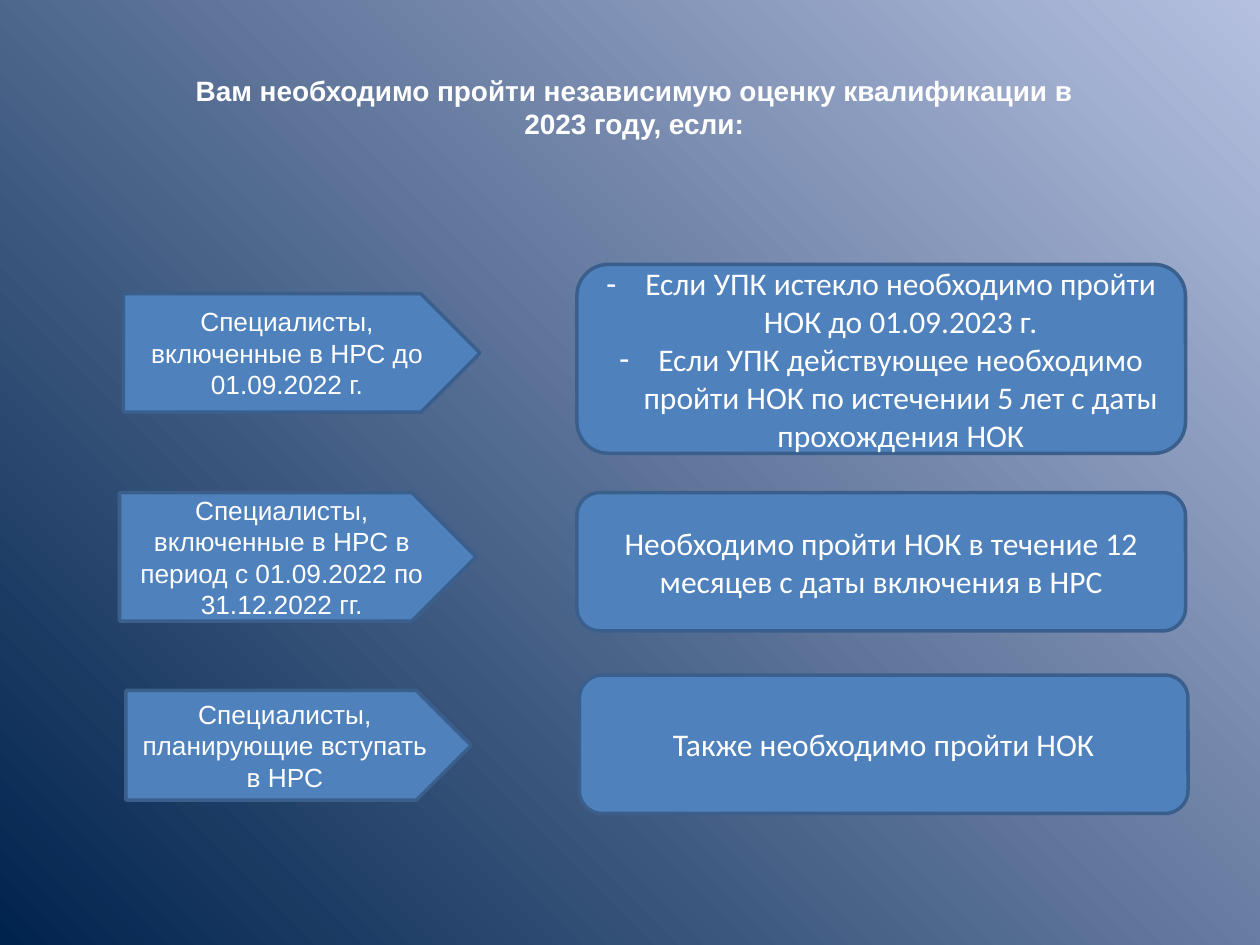
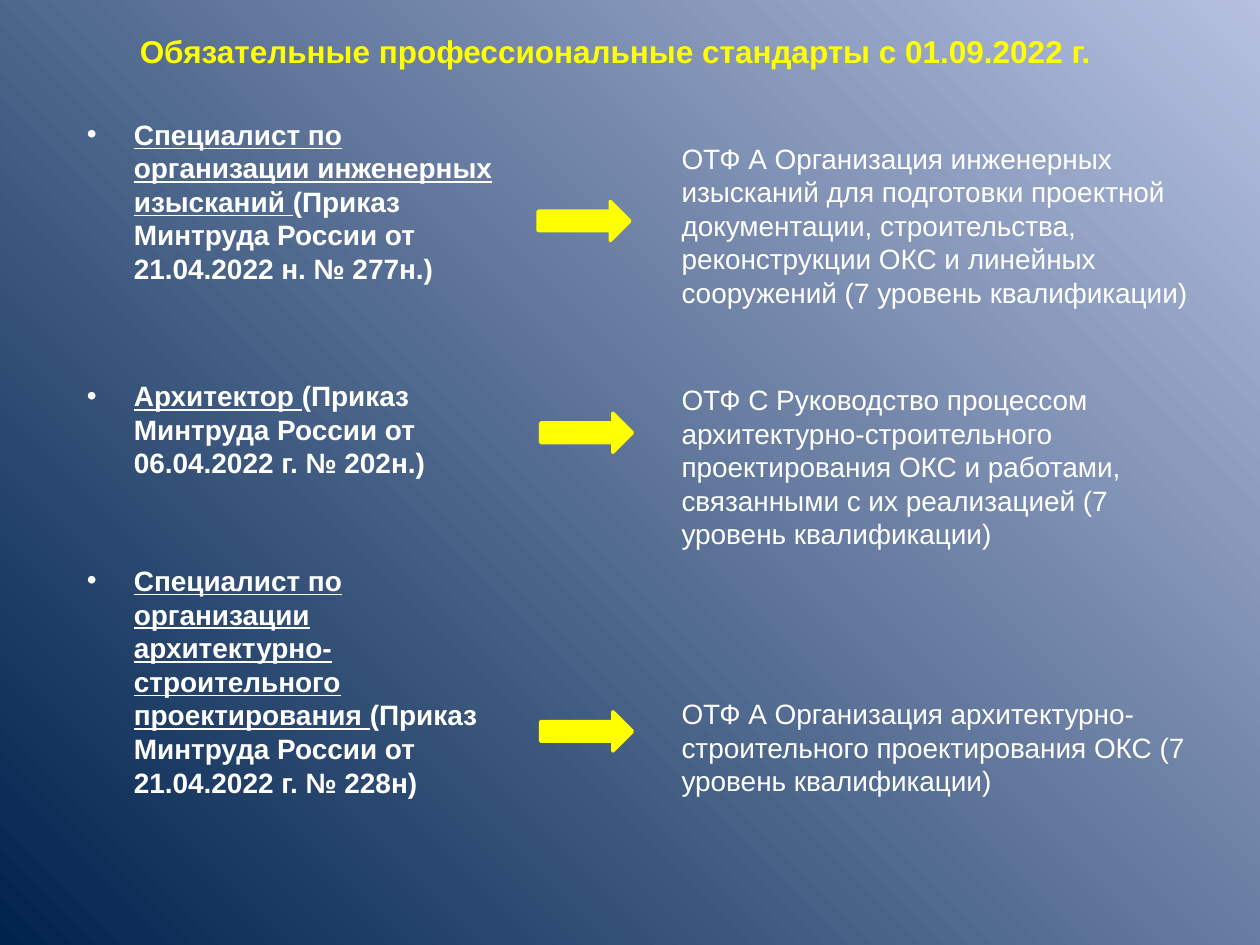
from pptx import Presentation
from pptx.dml.color import RGBColor
from pptx.enum.shapes import MSO_SHAPE
from pptx.enum.text import MSO_ANCHOR, PP_ALIGN
from pptx.oxml import parse_xml
from pptx.oxml.ns import nsdecls, qn
from pptx.util import Cm, Pt

PENTAGON = MSO_SHAPE.PENTAGON
ROUNDED = MSO_SHAPE.ROUNDED_RECTANGLE
RIGHT_ARROW = MSO_SHAPE.RIGHT_ARROW
MIDDLE = MSO_ANCHOR.MIDDLE
CENTER = PP_ALIGN.CENTER
LEFT = PP_ALIGN.LEFT

WHITE = RGBColor(0xFF, 0xFF, 0xFF)
YELLOW = RGBColor(0xFF, 0xFF, 0x00)
BLUE = RGBColor(0x4F, 0x81, 0xBD)
DARK_BLUE = RGBColor(0x3A, 0x5F, 0x8C)
GRADIENT = ((0, RGBColor(0xBF, 0xC9, 0xE5)), (0, RGBColor(0xB5, 0xC0, 0xE0)),
            (100000, RGBColor(0x00, 0x23, 0x4D)))

CASES = (
    ((2.49, 5.92, 7.19, 2.39), "Специалисты, включенные в НРС до 01.09.2022 г.",
     (11.63, 5.33, 12.27, 3.81),
     ("Если УПК истекло необходимо пройти НОК до 01.09.2023 г.",
      "Если УПК действующее необходимо пройти НОК по истечении 5 лет с даты прохождения НОК")),
    ((2.41, 9.93, 7.19, 2.59),
     "Специалисты, включенные в НРС в период с 01.09.2022 по 31.12.2022 гг.",
     (11.63, 9.93, 12.27, 2.79),
     ("Необходимо пройти НОК в течение 12 месяцев с даты включения в НРС",)),
    ((2.54, 13.92, 6.96, 2.21), "Специалисты, планирующие вступать в НРС",
     (11.68, 13.61, 12.27, 2.79), ("Также необходимо пройти НОК",)),
)

STANDARDS = (
    (0, "Специалист по организации инженерных изысканий ",
     "(Приказ Минтруда России от 21.04.2022 н. № 277н.)"),
    (53.5, "Архитектор ", "(Приказ Минтруда России от 06.04.2022 г. № 202н.)"),
    (48, "Специалист по организации архитектурно-строительного проектирования ",
     "(Приказ Минтруда России от 21.04.2022 г. № 228н)"),
)

FUNCTIONS = (
    (10.85, 4.06, 2.72,
     "ОТФ А Организация инженерных изысканий для подготовки проектной документации, "
     "строительства, реконструкции ОКС и линейных сооружений (7 уровень квалификации)"),
    (10.9, 8.33, 7.59,
     "ОТФ С Руководство процессом архитектурно-строительного проектирования ОКС "
     "и работами, связанными с их реализацией (7 уровень квалификации)"),
    (10.9, 14.35, 13.92,
     "ОТФ А Организация архитектурно-строительного проектирования ОКС "
     "(7 уровень квалификации)"),
)


def set_background(master):
    """Give every slide a gradient that spreads from the top right corner."""
    stops = "".join(f'<a:gs pos="{pos}"><a:srgbClr val="{color}"/></a:gs>'
                    for pos, color in GRADIENT)
    background = parse_xml(
        f'<p:bg {nsdecls("p", "a")}><p:bgPr><a:gradFill rotWithShape="1">'
        f'<a:gsLst>{stops}</a:gsLst><a:path path="circle">'
        '<a:fillToRect l="100000" b="100000"/></a:path></a:gradFill>'
        '<a:effectLst/></p:bgPr></p:bg>')
    common = master.element.cSld
    for old in common.findall(qn("p:bg")):
        common.remove(old)
    common.insert(0, background)


def style(paragraph, size, color=WHITE, font="Arial", bold=False, align=LEFT):
    """Set the alignment and the font of a paragraph."""
    paragraph.alignment = align
    paragraph.font.size = Pt(size)
    paragraph.font.name = font
    paragraph.font.bold = bold
    paragraph.font.color.rgb = color


def add_bullet(paragraph, char, indent):
    """Hang a paragraph behind a bullet character."""
    properties = paragraph._p.get_or_add_pPr()
    properties.set("marL", str(Cm(indent)))
    properties.set("indent", str(-Cm(indent)))
    properties.append(parse_xml(f'<a:buFont {nsdecls("a")} typeface="Arial"/>'))
    properties.append(parse_xml(f'<a:buChar {nsdecls("a")} char="{char}"/>'))


def add_text_frame(slide, box):
    """Add a wrapping text box and return its frame."""
    frame = slide.shapes.add_textbox(*map(Cm, box)).text_frame
    frame.word_wrap = True
    return frame


def add_text(slide, box, text, size, **look):
    """Add a text box with one paragraph."""
    paragraph = add_text_frame(slide, box).paragraphs[0]
    paragraph.text = text
    style(paragraph, size, **look)


def add_title(slide, box, text, size, color):
    """Add a bold centred slide title."""
    add_text(slide, box, text, size, color=color, bold=True, align=CENTER)


def add_figure(slide, kind, box, fill, outline):
    """Add a filled and outlined preset shape."""
    figure = slide.shapes.add_shape(kind, *map(Cm, box))
    figure.shadow.inherit = False
    figure.fill.solid()
    figure.fill.fore_color.rgb = fill
    figure.line.color.rgb = outline
    figure.line.width = Pt(2)
    return figure


def add_panel(slide, kind, box, lines, size, font):
    """Add a blue panel with centred text, dashed when it has several lines."""
    frame = add_figure(slide, kind, box, BLUE, DARK_BLUE).text_frame
    frame.word_wrap = True
    frame.vertical_anchor = MIDDLE
    for index, line in enumerate(lines):
        paragraph = frame.add_paragraph() if index else frame.paragraphs[0]
        paragraph.text = line
        if len(lines) > 1:
            add_bullet(paragraph, "-", 0.79)
        style(paragraph, size, font=font, align=CENTER)


def add_standards(slide, box):
    """Add the bulleted list of standards with underlined names."""
    frame = add_text_frame(slide, box)
    for index, (gap, name, order) in enumerate(STANDARDS):
        paragraph = frame.add_paragraph() if index else frame.paragraphs[0]
        add_bullet(paragraph, "•", 0.95)
        paragraph.space_before = Pt(gap)
        style(paragraph, 16, bold=True)
        name_run = paragraph.add_run()
        name_run.text = name
        name_run.font.underline = True
        paragraph.add_run().text = order


def build_assessment(slide):
    """Show who has to pass the assessment and when."""
    add_title(slide, (3.68, 1.35, 18.21, 1.19),
              "Вам необходимо пройти независимую оценку квалификации в 2023 году, если:",
              16, WHITE)
    for group_box, group, rule_box, rules in CASES:
        add_panel(slide, PENTAGON, group_box, (group,), 15, "Arial")
        add_panel(slide, ROUNDED, rule_box, rules, 18, "Calibri")


def build_standards(slide):
    """Match each mandatory standard with its labour function."""
    add_title(slide, (0.3, 0.53, 24.21, 2.39),
              "Обязательные профессиональные стандарты с 01.09.2022 г.", 18, YELLOW)
    add_standards(slide, (1.5, 2.24, 8.89, 16.1))
    for arrow_left, arrow_top, text_top, function in FUNCTIONS:
        add_figure(slide, RIGHT_ARROW, (arrow_left, arrow_top, 1.85, 0.79), YELLOW, YELLOW)
        add_text(slide, (13.49, text_top, 11, 4.29), function, 16)


def main():
    """Build and save the presentation."""
    deck = Presentation()
    deck.slide_width = Cm(25.4)
    deck.slide_height = Cm(19.05)
    set_background(deck.slide_master)
    blank = deck.slide_layouts[6]
    for build in (build_assessment, build_standards):
        build(deck.slides.add_slide(blank))
    deck.save("out.pptx")


if __name__ == "__main__":
    main()
